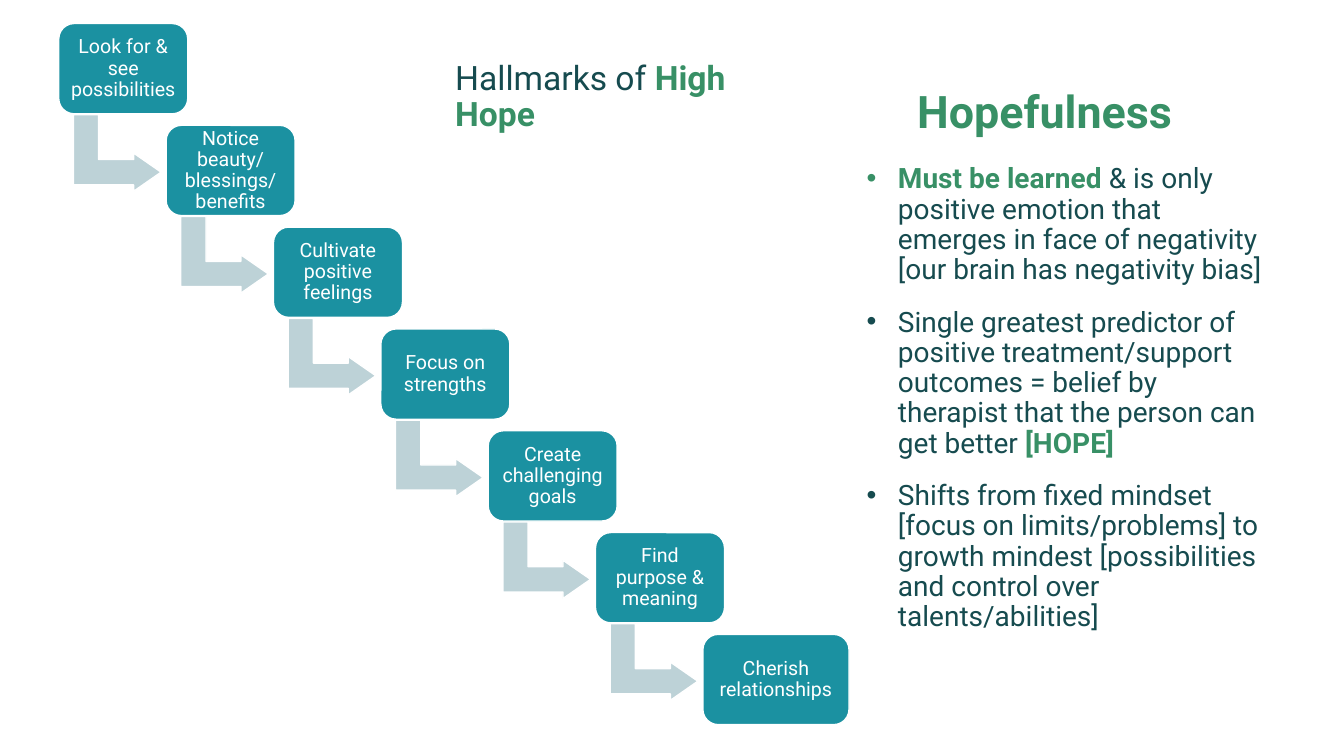
from dataclasses import dataclass
from typing import Any

from lxml.etree import SubElement as Sub
from pptx import Presentation as Deck
from pptx.dml.color import RGBColor as Rgb
from pptx.enum.shapes import MSO_SHAPE as Kind
from pptx.enum.text import MSO_ANCHOR as Anchor, PP_ALIGN as Align
from pptx.oxml.ns import qn
from pptx.util import Inches, Length, Pt

COLS, ROWS = 160, 90
GREEN, DARK, TEAL, PALE, WHITE = "389066", "164B4F", "1B91A1", "BDD2D7", "FFFFFF"
STEP_X, STEP_Y = 12.78, 12.12
WIDE, LAST, TALL = 15.36, 17.4, 10.75


@dataclass(frozen=True)
class Area:
    """Place on the grid, in columns and rows."""
    left: float
    top: float
    wide: float
    tall: float


@dataclass(frozen=True)
class Run:
    """Stretch of text in one colour and weight."""
    text: str
    tint: str = DARK
    bold: bool = False


STEPS = [
    "Look for & see possibilities",
    "Notice beauty/ blessings/ benefits",
    "Cultivate positive feelings",
    "Focus on strengths",
    "Create challenging goals",
    "Find purpose & meaning",
    "Cherish relationships",
]
TITLE = [[Run("Hopefulness", GREEN, True)]]
HEAD = [[Run("Hallmarks of "), Run("High Hope", GREEN, True)]]
POINTS = [
    [Run("Must be learned ", GREEN, True),
     Run("& is only positive emotion that emerges in face of negativity "
         "[our brain has negativity bias]")],
    [Run("Single greatest predictor of positive treatment/support outcomes = "
         "belief by therapist that the person can get better "),
     Run("[HOPE]", GREEN, True)],
    [Run("Shifts from fixed mindset [focus on limits/problems] to growth mindest "
         "[possibilities and control over talents/abilities]")],
]


def paint(tint: str) -> Rgb:
    """Turn a hex string into a colour."""
    return Rgb.from_string(tint)


def format(thing: Any, values: dict[str, Any]) -> None:
    """Set each named value on the thing."""
    for name, value in values.items():
        setattr(thing, name, value)


def frame(area: Area) -> list[Length]:
    """Turn a grid area into slide lengths."""
    return [Inches(13.33 * area.left / COLS), Inches(7.5 * area.top / ROWS),
            Inches(13.33 * area.wide / COLS), Inches(7.5 * area.tall / ROWS)]


def mark(para: Any) -> None:
    """Give a paragraph a hanging bullet."""
    props = para._p.get_or_add_pPr()
    props.set("marL", str(Inches(0.31)))
    props.set("indent", str(-Inches(0.31)))
    Sub(props, qn("a:buFont")).set("typeface", "Arial")
    Sub(props, qn("a:buChar")).set("char", "•")


def write(body: Any, paras: list[list[Run]], size: float,
          bullet: bool = False, align: Align = Align.LEFT) -> None:
    """Fill a text frame with paragraphs of runs."""
    body.word_wrap = True
    for index, runs in enumerate(paras):
        para = body.add_paragraph() if index else body.paragraphs[0]
        if bullet:
            mark(para)
        format(para, {"line_spacing": 0.9, "alignment": align,
                      "space_before": Pt(16 if index else 0)})
        for run in runs:
            part = para.add_run()
            part.text = run.text
            format(part.font, {"name": "Roboto", "size": Pt(size), "bold": run.bold})
            part.font.color.rgb = paint(run.tint)


def label(slide: Any, area: Area, paras: list[list[Run]], size: float,
          bullet: bool = False, anchor: Anchor = Anchor.TOP) -> None:
    """Add a text box."""
    body = slide.shapes.add_textbox(*frame(area)).text_frame
    body.vertical_anchor = anchor
    write(body, paras, size, bullet)


def block(slide: Any, kind: Kind, area: Area, tint: str, bends: list[float]) -> Any:
    """Add a filled shape with a thin white edge."""
    shape = slide.shapes.add_shape(kind, *frame(area))
    shape.shadow.inherit = False
    shape.fill.solid()
    shape.fill.fore_color.rgb = paint(tint)
    shape.line.color.rgb = paint(WHITE)
    shape.line.width = Pt(1)
    for index, bend in enumerate(bends):
        shape.adjustments[index] = bend
    return shape


def stairs(slide: Any) -> None:
    """Draw the steps, each but the last with an arrow to the next."""
    final = len(STEPS) - 1
    for index, text in enumerate(STEPS):
        left, top = 7 + index * STEP_X, 2.8 + index * STEP_Y
        if index < final:
            bend = block(slide, Kind.BENT_UP_ARROW,
                         Area(left + 2.4, top + 10.2, 9.12, 10.44),
                         PALE, [0.33, 0.25, 0.36])
            bend.rotation = 90
        card = block(slide, Kind.ROUNDED_RECTANGLE,
                     Area(left, top, WIDE if index < final else LAST, TALL),
                     TEAL, [0.17])
        body = card.text_frame
        sides = ("left", "top", "right", "bottom")
        format(body, {f"margin_{side}": Inches(0.06) for side in sides})
        body.vertical_anchor = Anchor.MIDDLE
        write(body, [[Run(text, WHITE)]], 14, align=Align.CENTER)


def main() -> None:
    """Build and save the slide."""
    deck = Deck()
    format(deck, {"slide_width": Inches(13.33), "slide_height": Inches(7.5)})
    slide = deck.slides.add_slide(deck.slide_layouts[6])
    label(slide, Area(108, 4, 50, 13), TITLE, 32, anchor=Anchor.BOTTOM)
    stairs(slide)
    label(slide, Area(102, 19, 50, 56), POINTS, 20, bullet=True)
    label(slide, Area(53, 6.7, 38, 10), HEAD, 24)
    deck.save("out.pptx")


if __name__ == "__main__":
    main()
